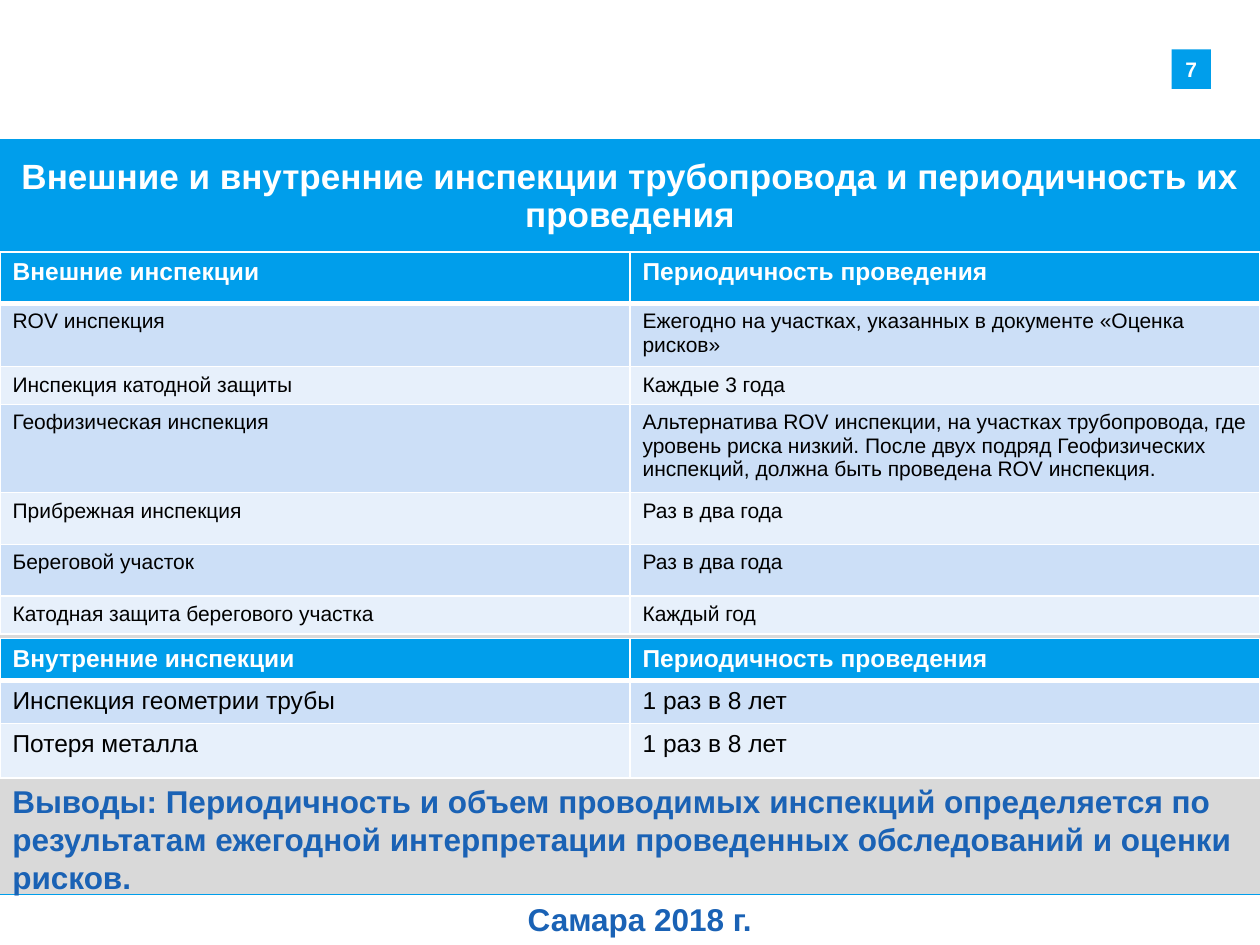
import pptx
import pptx.util
import pptx.dml.color
import pptx.enum.shapes
import pptx.enum.text
import pptx.oxml
import pptx.oxml.ns
from lxml import etree

Pt = pptx.util.Pt
PP_ALIGN = pptx.enum.text.PP_ALIGN
MSO_ANCHOR = pptx.enum.text.MSO_ANCHOR

WIDTH, HEIGHT = 720, 540
FONT = "Arial"
BLUE, DARK_BLUE = "009EEB", "1A62B5"
WHITE, BLACK, GREY = "FFFFFF", "000000", "D9D9D9"
BANDS = ("CCDFF7", "E7F0FB")

EXTERNAL = [
    ("Внешние инспекции", "Периодичность проведения"),
    ("ROV инспекция",
     "Ежегодно на участках, указанных в документе «Оценка рисков»"),
    ("Инспекция катодной защиты", "Каждые 3 года"),
    ("Геофизическая инспекция",
     "Альтернатива ROV инспекции, на участках трубопровода, где уровень "
     "риска низкий. После двух подряд Геофизических инспекций, должна быть "
     "проведена ROV инспекция."),
    ("Прибрежная инспекция", "Раз в два года"),
    ("Береговой участок", "Раз в два года"),
    ("Катодная защита берегового участка", "Каждый год"),
]
INTERNAL = [
    ("Внутренние инспекции", "Периодичность проведения"),
    ("Инспекция геометрии трубы", "1 раз в 8 лет"),
    ("Потеря металла", "1 раз в 8 лет"),
]


def rgb(color):
    return pptx.dml.color.RGBColor.from_string(color)


def write(tf, text, size, color, bold=True, align=PP_ALIGN.LEFT):
    p = tf.paragraphs[0]
    p.text = text
    p.alignment = align
    p.font.name = FONT
    p.font.size = Pt(size)
    p.font.bold = bold
    p.font.color.rgb = rgb(color)
    return p


def center_tightly(tf):
    tf.vertical_anchor = MSO_ANCHOR.MIDDLE
    tf.margin_left = tf.margin_right = tf.margin_top = tf.margin_bottom = 0


def add_rect(s, x, y, w, h, color):
    sp = s.shapes.add_shape(pptx.enum.shapes.MSO_SHAPE.RECTANGLE,
                            Pt(x), Pt(y), Pt(w), Pt(h))
    sp.shadow.inherit = False
    sp.fill.solid()
    sp.fill.fore_color.rgb = rgb(color)
    sp.line.fill.background()
    return sp


def add_rule(s, y, color, width):
    line = s.shapes.add_connector(pptx.enum.shapes.MSO_CONNECTOR.STRAIGHT,
                                  0, Pt(y), Pt(WIDTH), Pt(y))
    line.line.color.rgb = rgb(color)
    line.line.width = Pt(width)
    etree.SubElement(line._element.spPr, pptx.oxml.ns.qn("a:effectLst"))


def add_text(s, x, y, w, h, text, size, color, wrap=True):
    tf = s.shapes.add_textbox(Pt(x), Pt(y), Pt(w), Pt(h)).text_frame
    tf.word_wrap = wrap
    write(tf, text, size, color)
    return tf


def set_border(cell, side, width):
    cell._tc.get_or_add_tcPr().append(pptx.oxml.parse_xml(
        f'<a:ln{side} {pptx.oxml.ns.nsdecls("a")} w="{Pt(width)}">'
        f'<a:solidFill><a:srgbClr val="{WHITE}"/></a:solidFill></a:ln{side}>'))


def add_table(s, y, heights, rows, body_size):
    table = s.shapes.add_table(len(rows), 2, 0, Pt(y), Pt(WIDTH),
                               Pt(sum(heights))).table
    for i, (height, texts) in enumerate(zip(heights, rows)):
        table.rows[i].height = Pt(height)
        header = i == 0
        for j, text in enumerate(texts):
            cell = table.cell(i, j)
            # A thick rule separates the header from the body
            for side in "LRTB":
                thick = (i, side) in ((0, "B"), (1, "T"))
                set_border(cell, side, 3 if thick else 1)
            cell.fill.solid()
            cell.fill.fore_color.rgb = rgb(BLUE if header
                                           else BANDS[(i - 1) % 2])
            write(cell.text_frame, text, 14 if header else body_size,
                  WHITE if header else BLACK, bold=header)


def main():
    prs = pptx.Presentation()
    prs.slide_width, prs.slide_height = Pt(WIDTH), Pt(HEIGHT)
    s = prs.slides.add_slide(prs.slide_layouts[6])

    # Background bands and footer rule
    add_rect(s, 0, 146, WIDTH, 365, GREY)
    add_rect(s, 0, 79.5, WIDTH, 66.5, BLUE)
    add_rule(s, 511, BLUE, 0.75)

    # Slide number
    tf = add_rect(s, 669.5, 28.3, 22.5, 22.5, BLUE).text_frame
    center_tightly(tf)
    write(tf, "7", 12, WHITE, align=PP_ALIGN.CENTER)

    # Title
    tf = add_text(s, 0, 80, WIDTH, 65,
                  "Внешние и внутренние инспекции трубопровода и "
                  "периодичность их проведения", 20, WHITE)
    center_tightly(tf)
    tf.paragraphs[0].alignment = PP_ALIGN.CENTER
    tf.paragraphs[0].line_spacing = 0.9

    # Inspection tables
    add_table(s, 144, [29.5, 36, 19.5, 47, 29.5, 29.5, 21.5], EXTERNAL, 12)
    add_table(s, 365, [21.5, 24.5, 31], INTERNAL, 14)

    # Footer and conclusions
    add_text(s, 294.5, 511, 149, 29, "Самара 2018 г.", 18, DARK_BLUE,
             wrap=False)
    add_text(s, 0, 443.5, WIDTH, 72.7,
             "Выводы: Периодичность и объем проводимых инспекций "
             "определяется по результатам ежегодной интерпретации "
             "проведенных обследований и оценки рисков.", 18, DARK_BLUE)

    prs.save("out.pptx")


if __name__ == "__main__":
    main()
